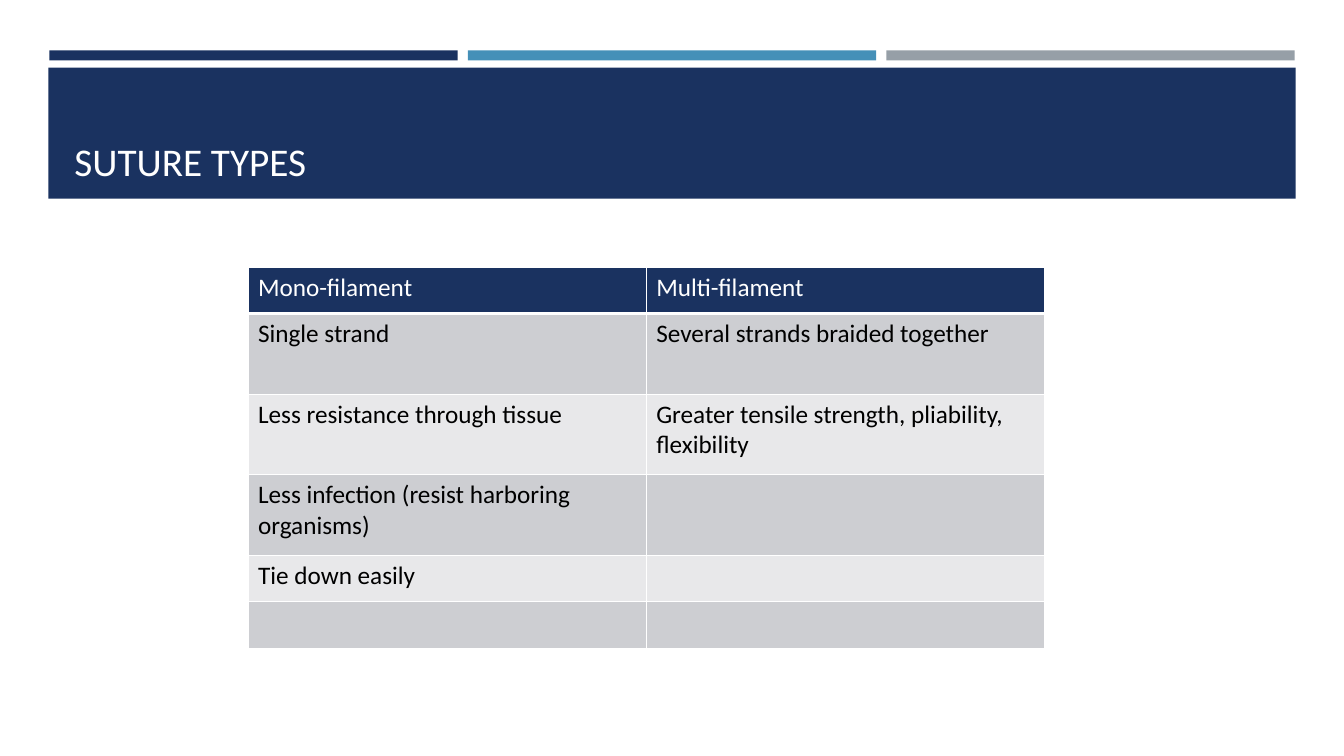
from lxml import etree
from pptx import Presentation
from pptx.dml.color import RGBColor
from pptx.enum.shapes import MSO_SHAPE
from pptx.enum.text import MSO_ANCHOR
from pptx.oxml.ns import qn
from pptx.util import Pt

RECT = MSO_SHAPE.RECTANGLE
BOTTOM = MSO_ANCHOR.BOTTOM
SCALE = 9144  # EMU in one px, 100 px to the inch
FONT = "Calibri"
COLORS = {
    "navy": "1A3260", "blue": "4590B8", "gray": "969FA7",
    "dark": "CDCED2", "light": "E8E8EA",
    "white": "FFFFFF", "black": "000000",
}


def px(num):
    return num * SCALE


def rgb(name):
    return RGBColor.from_string(COLORS[name])


class Deck:
    def __init__(self, wide, high):
        self.prs = Presentation()
        self.prs.slide_width, self.prs.slide_height = px(wide), px(high)
        self.slide = self.prs.slides.add_slide(self.prs.slide_layouts[6])

    def bar(self, x, y, w, h, color):
        shape = self.slide.shapes.add_shape(RECT, px(x), px(y), px(w), px(h))
        shape.shadow.inherit = False
        shape.fill.solid()
        shape.fill.fore_color.rgb = rgb(color)
        shape.line.fill.background()

    def label(self, frame, text, size, color):
        frame.text = text
        font = frame.paragraphs[0].font
        for item in [font] + [run.font for run in frame.paragraphs[0].runs]:
            item.name, item.size, item.bold = FONT, Pt(size), False
            item.color.rgb = rgb(color)

    def title(self, x, y, w, h, text):
        frame = self.slide.shapes.add_textbox(px(x), px(y), px(w), px(h)).text_frame
        frame.word_wrap = True
        frame.vertical_anchor = BOTTOM
        self.label(frame, text, 28, "white")

    def edges(self, cell, base):
        props = cell._tc.get_or_add_tcPr()
        for side in "LRTB":
            width = base if side == "B" else 1
            line = etree.SubElement(props, qn("a:ln" + side), w=str(Pt(width)))
            fill = etree.SubElement(line, qn("a:solidFill"))
            etree.SubElement(fill, qn("a:srgbClr"), val=COLORS["white"])

    def table(self, x, y, w, highs, rows):
        cols = len(rows[0])
        frame = self.slide.shapes.add_table(
            len(rows), cols, px(x), px(y), px(w), px(sum(highs)))
        grid = frame.table
        for r, row in enumerate(rows):
            grid.rows[r].height = px(highs[r])
            band = "navy" if r == 0 else "dark" if r % 2 else "light"
            for c, text in enumerate(row):
                cell = grid.cell(r, c)
                self.edges(cell, 3 if r == 0 else 1)
                cell.fill.solid()
                cell.fill.fore_color.rgb = rgb(band)
                self.label(cell.text_frame, text, 18,
                           "black" if r else "white")


def main():
    deck = Deck(1333, 750)

    # Three strips over the title band
    for i, color in enumerate(("navy", "blue", "gray")):
        deck.bar(49 + i * 415, 50, 405, 10, color)

    # Title band
    deck.bar(48, 67, 1237, 130, "navy")
    deck.title(64, 77, 1206, 111, "SUTURE TYPES")

    # Comparison table
    deck.table(246, 265, 790, (46, 80, 80, 80, 46, 46), (
        ("Mono-filament", "Multi-filament"),
        ("Single strand", "Several strands braided together"),
        ("Less resistance through tissue",
         "Greater tensile strength, pliability, flexibility"),
        ("Less infection (resist harboring organisms)", ""),
        ("Tie down easily", ""),
        ("", ""),
    ))

    deck.prs.save("out.pptx")


if __name__ == "__main__":
    main()
